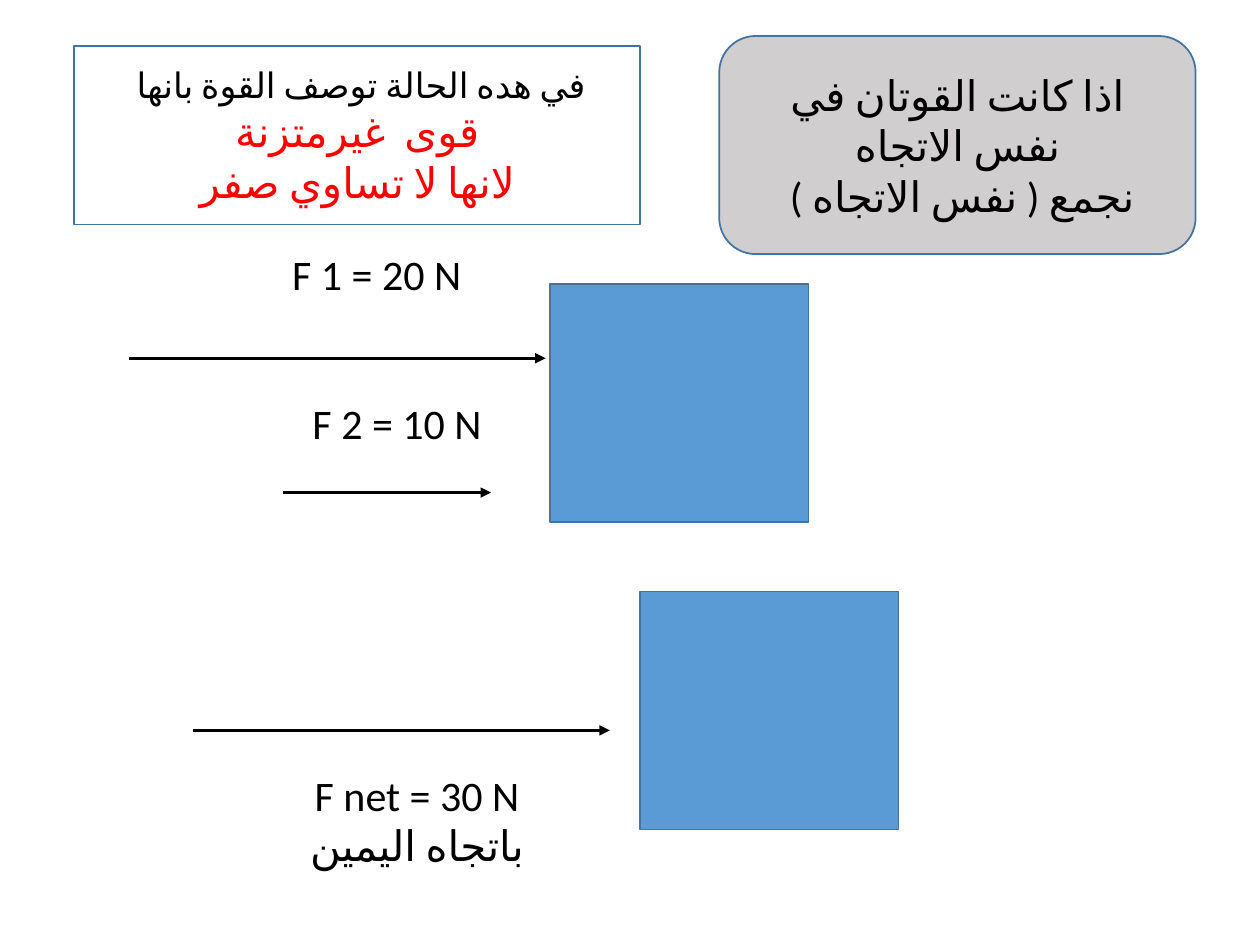
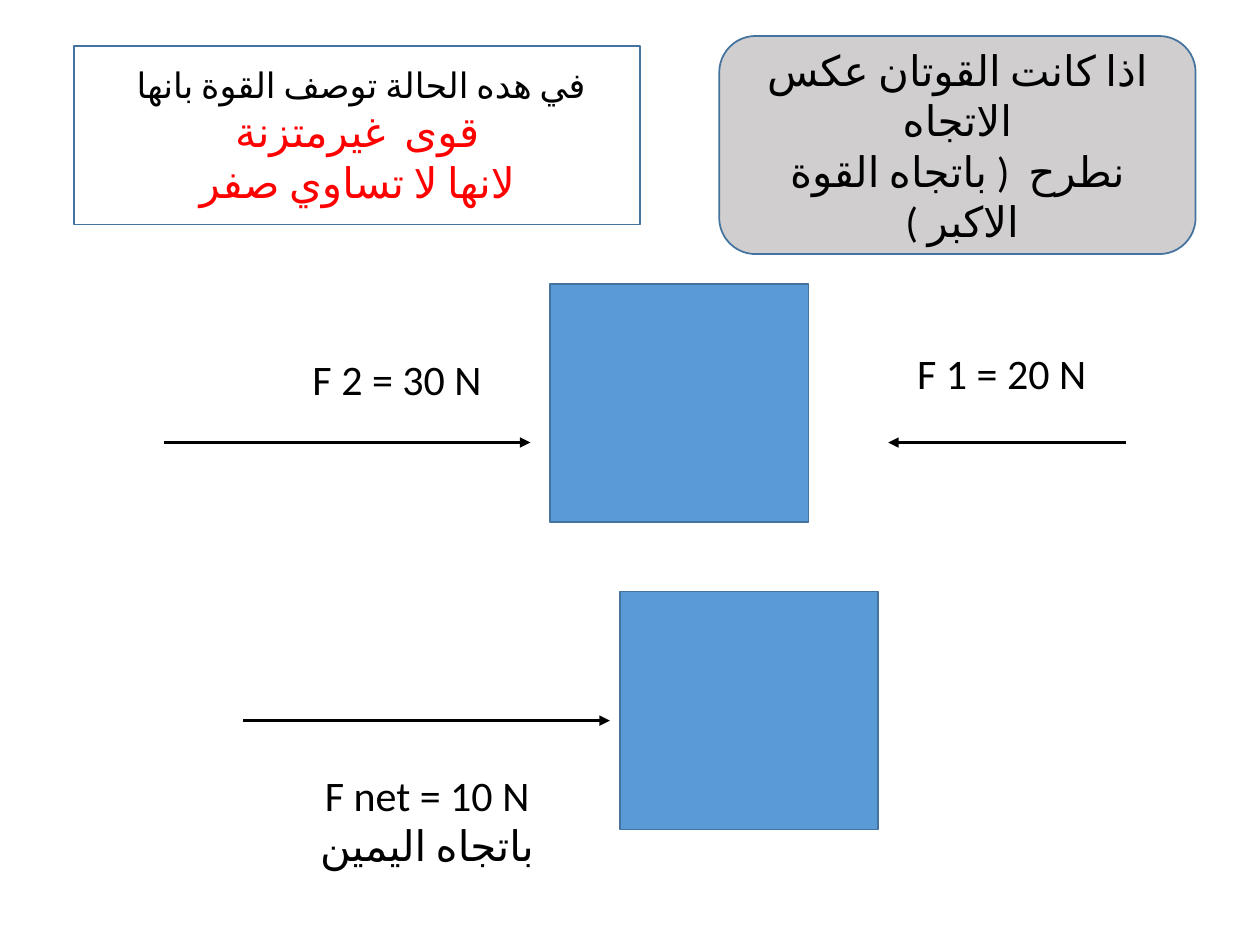
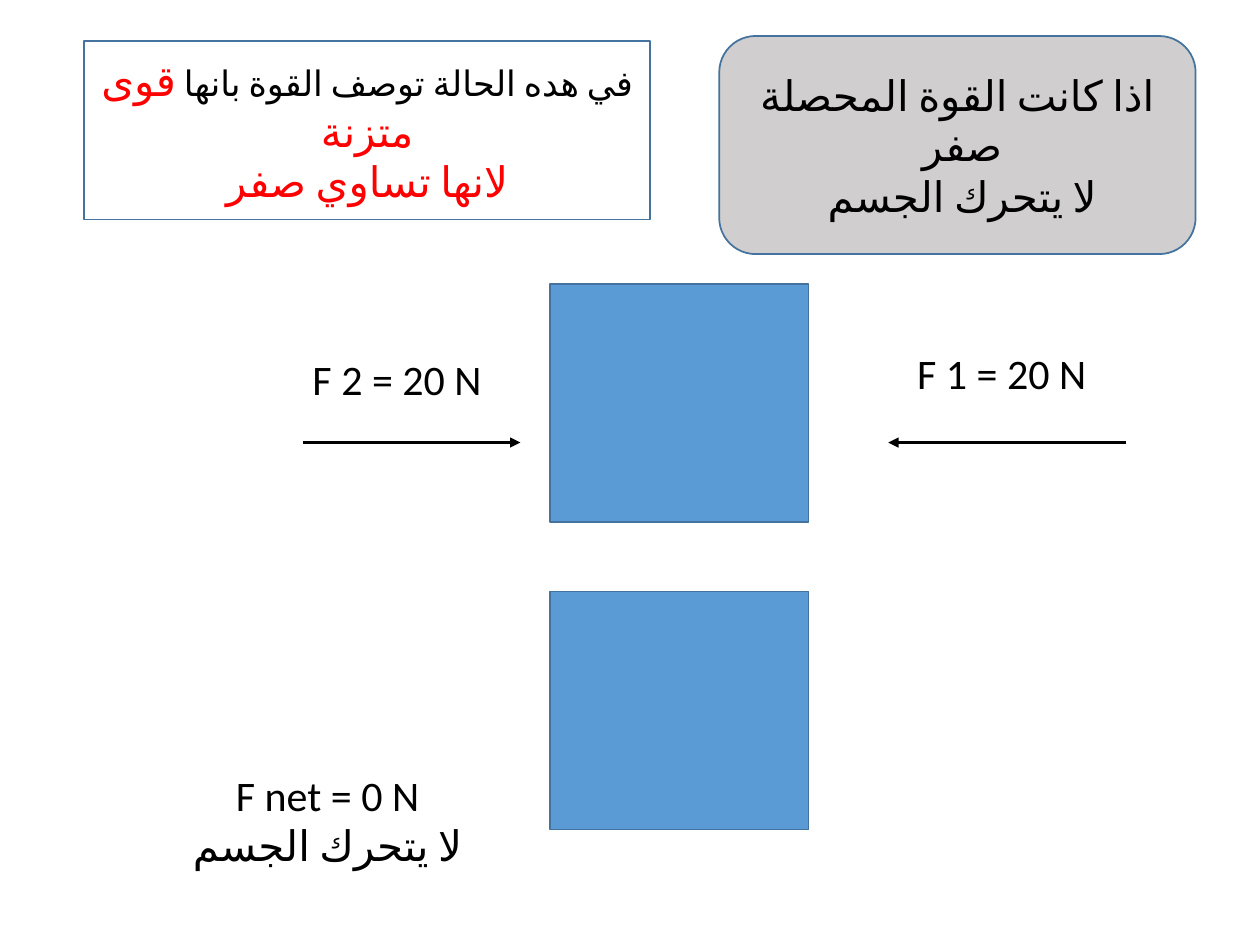
from lxml import etree
from pptx import Presentation
from pptx.dml.color import RGBColor
from pptx.enum.lang import MSO_LANGUAGE_ID
from pptx.enum.shapes import MSO_CONNECTOR, MSO_SHAPE
from pptx.enum.text import MSO_ANCHOR, PP_ALIGN
from pptx.oxml.ns import qn
from pptx.util import Pt

RECT = MSO_SHAPE.RECTANGLE
ROUNDED = MSO_SHAPE.ROUNDED_RECTANGLE
STRAIGHT = MSO_CONNECTOR.STRAIGHT
MIDDLE = MSO_ANCHOR.MIDDLE
CENTER = PP_ALIGN.CENTER
ARABIC = MSO_LANGUAGE_ID.ARABIC

COLORS = {
    "block": "5B9BD5",
    "outline": "43739E",
    "rule": "D0CECE",
    "paper": "FFFFFF",
    "text": "000000",
    "accent": "FF0000",
}
FONT = "Calibri"
SIZE = 24
SMALL = 20
INSET = 3.6
LINE_HEIGHT = 29.3
BLOCK_W, BLOCK_H = 147.6, 136.1
BLOCK_X, UPPER_Y, LOWER_Y = 314.4, 162.3, 338
OPPOSED_Y = 252.9

DESCRIBED_AS = ("في هده الحالة توصف القوة بانها ", SMALL, "text")
UNBALANCED = [
    [DESCRIBED_AS],
    [("قوى  غيرمتزنة", SIZE, "accent")],
    [("لانها لا تساوي صفر", SIZE, "accent")],
]
BALANCED = [
    [DESCRIBED_AS, ("قوى متزنة", SIZE, "accent")],
    [("لانها تساوي صفر", SIZE, "accent")],
]


def rgb(name):
    return RGBColor.from_string(COLORS[name])


def plain(*lines):
    return [[(line, SIZE, "text")] for line in lines]


def write(tf, paragraphs):
    tf.word_wrap = True
    tf.vertical_anchor = MIDDLE
    for i, runs in enumerate(paragraphs):
        p = tf.paragraphs[0] if i == 0 else tf.add_paragraph()
        p.alignment = CENTER
        p._p.get_or_add_pPr().set("rtl", "1")
        for text, size, color in runs:
            r = p.add_run()
            r.text = text
            r.font.name = FONT
            r.font.size = Pt(size)
            r.font.color.rgb = rgb(color)
            r.font.language_id = ARABIC
            etree.SubElement(r._r.get_or_add_rPr(), qn("a:cs"), typeface=FONT)


def add_box(s, x, y, w, h, fill, line="outline", paragraphs=(), kind=RECT):
    sp = s.shapes.add_shape(kind, Pt(x), Pt(y), Pt(w), Pt(h))
    sp.shadow.inherit = False
    sp.fill.solid()
    sp.fill.fore_color.rgb = rgb(fill)
    sp.line.color.rgb = rgb(line)
    sp.line.width = Pt(1)
    write(sp.text_frame, paragraphs)
    return sp


def add_rule(s, *lines):
    add_box(s, 411, 20.6, 272.2, 124.6, "rule",
            paragraphs=plain(*lines), kind=ROUNDED)


def add_verdict(s, paragraphs, x=42.5, y=26.2):
    add_box(s, x, y, 323.3, 102.2, "paper", paragraphs=paragraphs)


def add_block(s, x, y):
    add_box(s, x, y, BLOCK_W, BLOCK_H, "block")


def add_label(s, x, y, w, h, *lines, raised=False):
    sp = add_box(s, x, y, w, h, "paper", "paper", plain(*lines))
    if raised:
        sp.text_frame.margin_bottom = Pt(INSET + LINE_HEIGHT)


def add_first_force(s, x, y, text):
    add_label(s, x, y, 187.2, 51.1, text, raised=True)


def add_second_force(s, y, text, raised=False):
    add_label(s, 156, y, 141.8, 39.6, text, raised=raised)


def add_net_force(s, x, *lines):
    add_label(s, x, 434.4, 187.2, 67.7, *lines)


def add_arrow(s, x1, x2, y):
    c = s.shapes.add_connector(STRAIGHT, Pt(x1), Pt(y), Pt(x2), Pt(y))
    c.line.color.rgb = rgb("text")
    c.line.width = Pt(1.5)
    etree.SubElement(c.line._get_or_add_ln(), qn("a:tailEnd"), type="triangle")
    etree.SubElement(c._element.spPr, qn("a:effectLst"))


def add_slide(prs):
    s = prs.slides.add_slide(prs.slide_layouts[6])
    add_block(s, BLOCK_X, UPPER_Y)
    return s


def same_direction(prs):
    s = add_slide(prs)
    add_rule(s, "اذا كانت القوتان في نفس الاتجاه", "نجمع ( نفس الاتجاه ) ")
    add_verdict(s, UNBALANCED)
    add_block(s, 365.8, LOWER_Y)
    add_first_force(s, 121.7, 145.4, "F 1 = 20 N")
    add_second_force(s, 236.2, "F 2 = 10 N", raised=True)
    add_net_force(s, 144.7, "F net = 30 N", "باتجاه اليمين")
    add_arrow(s, 73.7, 311.8, 204.7)
    add_arrow(s, 161.6, 280.6, 281.5)
    add_arrow(s, 110.5, 348.5, 417.4)


def add_opposed_forces(s, second_text, start, end):
    add_first_force(s, 478.8, 202.3, "F 1 = 20 N")
    add_second_force(s, 196.6, second_text)
    add_arrow(s, 643.7, 507.6, OPPOSED_Y)
    add_arrow(s, start, end, OPPOSED_Y)


def opposite_direction(prs):
    s = add_slide(prs)
    add_rule(s, "اذا كانت القوتان عكس الاتجاه", "نطرح  ( باتجاه القوة الاكبر ) ")
    add_verdict(s, UNBALANCED)
    add_block(s, 354.2, LOWER_Y)
    add_opposed_forces(s, "F 2 = 30 N", 93.6, 303.1)
    add_net_force(s, 150.5, "F net = 10 N", "باتجاه اليمين")
    add_arrow(s, 139, 348.5, 411.8)


def zero_net_force(prs):
    s = add_slide(prs)
    add_rule(s, "اذا كانت القوة المحصلة صفر ", "لا يتحرك الجسم ")
    add_verdict(s, BALANCED, 48.2, 23.3)
    add_block(s, BLOCK_X, LOWER_Y)
    add_opposed_forces(s, "F 2 = 20 N", 173, 297.4)
    add_net_force(s, 93.6, "F net = 0 N", "لا يتحرك الجسم")


def main():
    prs = Presentation()
    prs.slide_width, prs.slide_height = Pt(720), Pt(540)
    same_direction(prs)
    opposite_direction(prs)
    zero_net_force(prs)
    prs.save("out.pptx")


if __name__ == "__main__":
    main()
